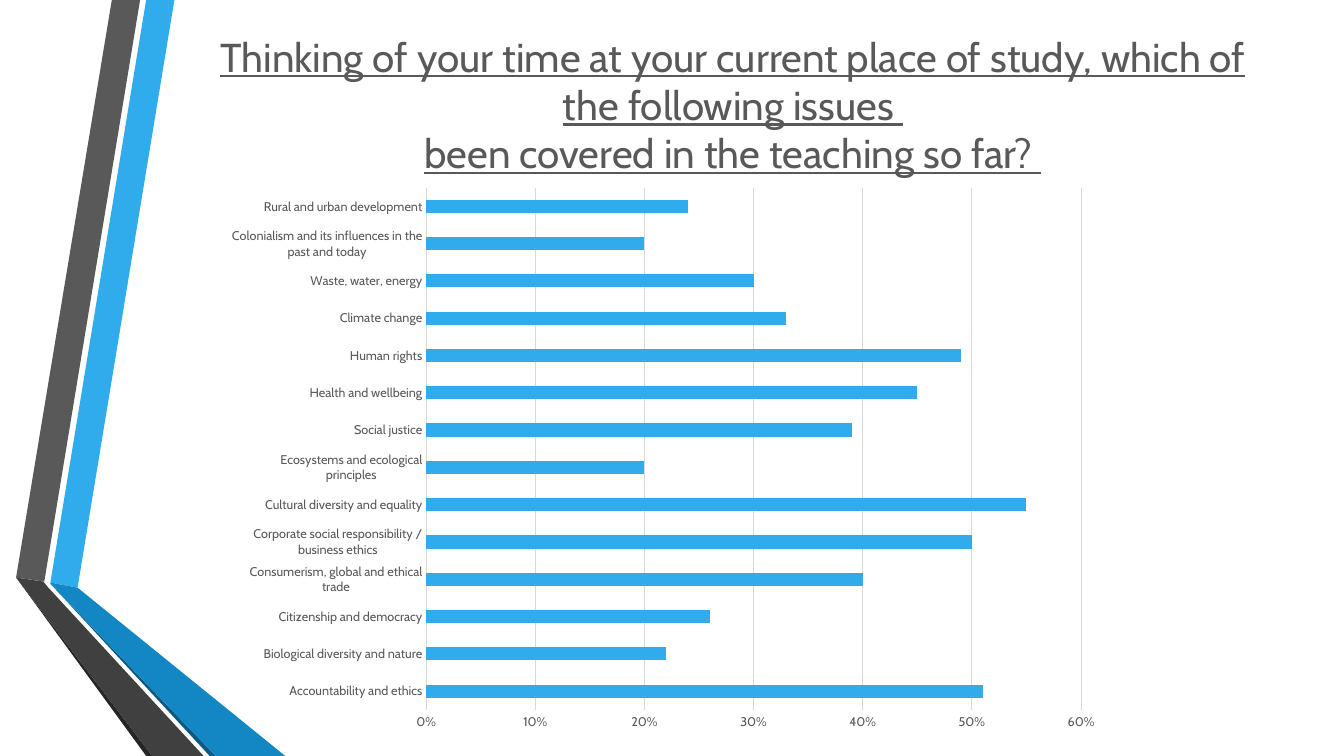
"""Build a slide with a bar chart of issues covered in teaching."""
from dataclasses import dataclass

from pptx import Presentation
from pptx.chart.data import CategoryChartData
from pptx.dml.color import RGBColor
from pptx.enum.chart import XL_CHART_TYPE as ChartType, XL_TICK_MARK as TickMark
from pptx.enum.text import MSO_ANCHOR as Anchor, PP_ALIGN as Align
from pptx.util import Inches, Pt


@dataclass(frozen=True)
class Theme:
    font: str = "Cabin"
    text: str = "595959"
    accent: str = "30ACEC"
    grid: str = "D9D9D9"
    title_size: float = 28.8
    axis_size: float = 9
    line_width: float = 0.75


THEME = Theme()

TITLE = (
    "Thinking of your time at your current place of study, which of the following issues \v"
    "been covered in the teaching so far? "
)

RIBBONS = [
    (THEME.accent, [(0.5, 5.78), (0.77, 5.83), (1.73, 0), (1.45, 0)]),
    (THEME.text, [(1.39, 0), (1.11, 0), (0.16, 5.73), (0.44, 5.77)]),
    ("262626", [(0.16, 5.73), (1.45, 7.5), (1.51, 7.5)]),
    ("0C5A82", [(0.5, 5.79), (2.08, 7.5), (2.14, 7.5)]),
    ("1287C3", [(0.5, 5.78), (0.5, 5.79), (2.14, 7.5), (2.83, 7.5), (0.77, 5.83)]),
    ("404040", [(0.16, 5.73), (1.51, 7.5), (2.02, 7.5), (0.48, 5.83), (0.43, 5.77)]),
]

COVERAGE = {
    "Accountability and ethics": 0.51,
    "Biological diversity and nature": 0.22,
    "Citizenship and democracy": 0.26,
    "Consumerism, global and ethical trade": 0.4,
    "Corporate social responsibility / business ethics": 0.5,
    "Cultural diversity and equality": 0.55,
    "Ecosystems and ecological principles": 0.2,
    "Social justice": 0.39,
    "Health and wellbeing": 0.45,
    "Human rights": 0.49,
    "Climate change": 0.33,
    "Waste, water, energy": 0.3,
    "Colonialism and its influences in the past and today": 0.2,
    "Rural and urban development": 0.24,
}


def apply_format(target, values):
    for name, value in values.items():
        setattr(target, name, value)


def style_font(font, size, **extra):
    apply_format(font, {"name": THEME.font, "size": Pt(size), **extra})
    font.color.rgb = RGBColor.from_string(THEME.text)


def style_line(line):
    line.width = Pt(THEME.line_width)
    line.color.rgb = RGBColor.from_string(THEME.grid)


def add_ribbon(slide, color, points):
    start, *rest = [(Inches(x), Inches(y)) for x, y in points]
    builder = slide.shapes.build_freeform(*start)
    builder.add_line_segments(rest, close=True)
    shape = builder.convert_to_shape()
    shape.shadow.inherit = False
    shape.fill.solid()
    shape.fill.fore_color.rgb = RGBColor.from_string(color)
    shape.line.fill.background()


def add_title(slide, text):
    box = slide.shapes.add_textbox(Inches(1.79), Inches(0.15), Inches(10.96), Inches(1.92))
    frame = box.text_frame
    apply_format(frame, {
        "word_wrap": True,
        "vertical_anchor": Anchor.MIDDLE,
        "margin_bottom": Inches(0.2),
    })
    paragraph = frame.paragraphs[0]
    paragraph.text = text
    paragraph.alignment = Align.CENTER
    for run in paragraph.runs:
        style_font(run.font, THEME.title_size, underline=True)


def style_axis(axis, values):
    apply_format(axis, {
        "major_tick_mark": TickMark.NONE,
        "minor_tick_mark": TickMark.NONE,
        **values,
    })
    style_font(axis.tick_labels.font, THEME.axis_size)


def add_bar_chart(slide, coverage):
    data = CategoryChartData(number_format="0%")
    data.categories = list(coverage)
    data.add_series("Series 1", list(coverage.values()))
    chart = slide.shapes.add_chart(
        ChartType.BAR_CLUSTERED, Inches(2.3), Inches(1.75), Inches(8.73), Inches(5.6), data
    ).chart
    apply_format(chart, {"has_legend": False, "has_title": False})
    style_font(chart.font, THEME.axis_size)

    plot = chart.plots[0]
    apply_format(plot, {"gap_width": 182, "vary_by_categories": False})
    fill = plot.series[0].format.fill
    fill.solid()
    fill.fore_color.rgb = RGBColor.from_string(THEME.accent)

    style_axis(chart.category_axis, {"has_major_gridlines": False})
    style_line(chart.category_axis.format.line)

    value_axis = chart.value_axis
    style_axis(value_axis, {
        "minimum_scale": 0,
        "maximum_scale": 0.6,
        "major_unit": 0.1,
        "has_major_gridlines": True,
    })
    apply_format(value_axis.tick_labels, {
        "number_format": "0%",
        "number_format_is_linked": False,
    })
    value_axis.format.line.fill.background()
    style_line(value_axis.major_gridlines.format.line)


def main():
    presentation = Presentation()
    apply_format(presentation, {"slide_width": Inches(13.33), "slide_height": Inches(7.5)})
    slide = presentation.slides.add_slide(presentation.slide_layouts[6])
    for color, points in RIBBONS:
        add_ribbon(slide, color, points)
    add_title(slide, TITLE)
    add_bar_chart(slide, COVERAGE)
    presentation.save("out.pptx")


if __name__ == "__main__":
    main()
